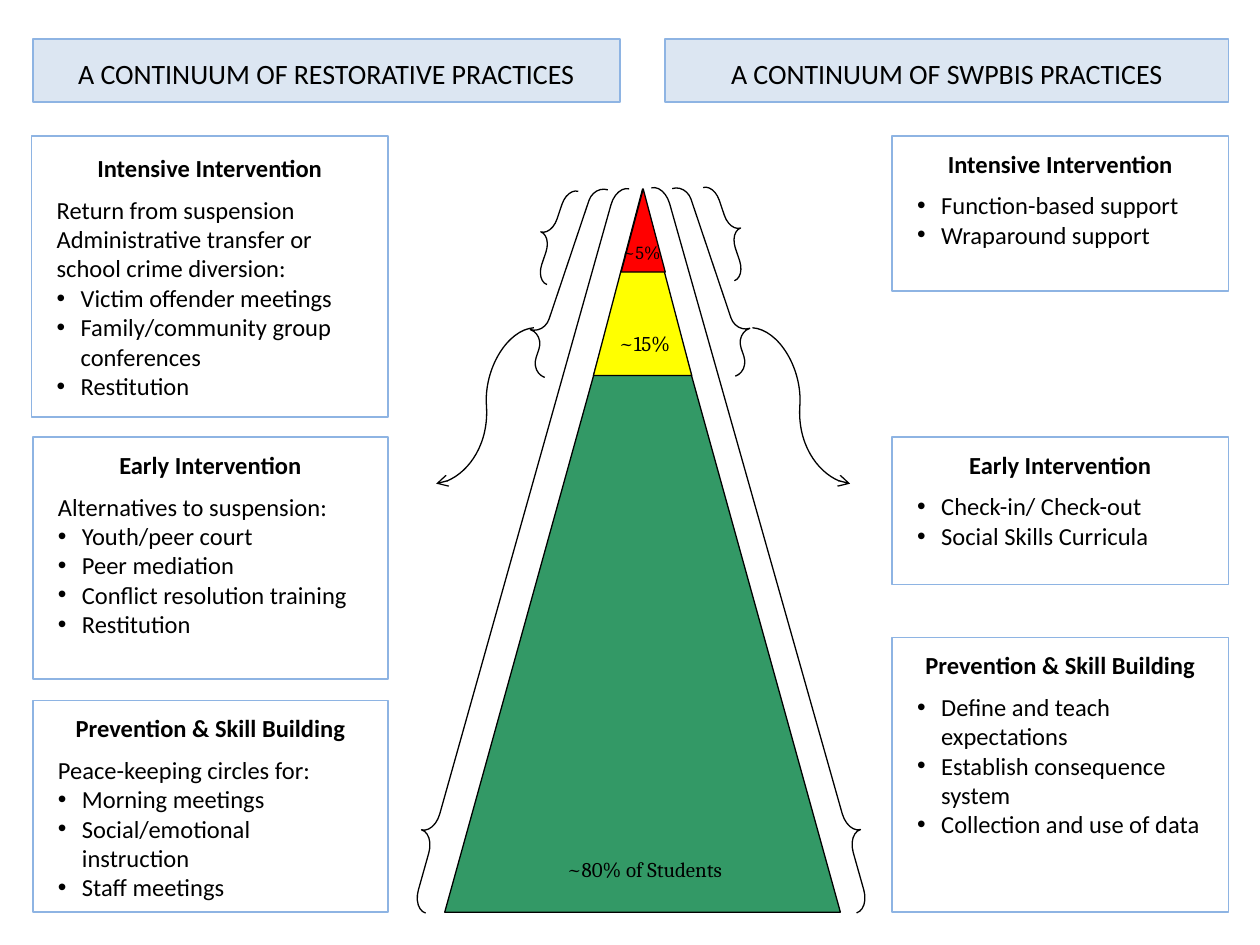
import pptx
import pptx.dml.color
import pptx.enum.shapes
import pptx.enum.text
import pptx.oxml
import pptx.oxml.ns
import pptx.util

Inches = pptx.util.Inches
Pt = pptx.util.Pt
SHAPE = pptx.enum.shapes.MSO_SHAPE
ALIGN = pptx.enum.text.PP_ALIGN
ANCHOR = pptx.enum.text.MSO_ANCHOR
qn = pptx.oxml.ns.qn
DRAWING_NS = 'xmlns:a="http://schemas.openxmlformats.org/drawingml/2006/main"'


def color(hex_string):
    return pptx.dml.color.RGBColor.from_string(hex_string)


def add_outlined(kind, place, line, width, fill=None):
    """Add a preset shape without shadow; no fill colour leaves it hollow."""
    shape = page.shapes.add_shape(kind, *map(Inches, place))
    shape.shadow.inherit = False
    shape.line.color.rgb = color(line)
    shape.line.width = Pt(width)
    if fill:
        shape.fill.solid()
        shape.fill.fore_color.rgb = color(fill)
    else:
        shape.fill.background()
    return shape


deck = pptx.Presentation()
deck.slide_width = Inches(10)
deck.slide_height = Inches(7.5)
page = deck.slides.add_slide(deck.slide_layouts[6])

# Column headers
headers = [
    ("A CONTINUUM OF RESTORATIVE PRACTICES", 0.26, 4.66),
    ("A CONTINUUM OF SWPBIS PRACTICES", 5.28, 4.47),
]
for text, left, width in headers:
    box = add_outlined(SHAPE.RECTANGLE, (left, 0.31, width, 0.5), "8EB4E3", 1, "DCE6F2")
    box.text_frame.vertical_anchor = ANCHOR.MIDDLE
    para = box.text_frame.paragraphs[0]
    para.text = text
    para.alignment = ALIGN.CENTER
    para.line_spacing = 1.15
    para.font.size = Pt(16)
    para.font.name = "Calibri"
    para.font.color.rgb = color("000000")

# Practice panels: place, title, title line spacing, plain lines, bulleted lines
panels = [
    ((0.25, 1.08, 2.83, 2.23), "Intensive Intervention", 1.15,
     ["Return from suspension", "Administrative transfer or school crime diversion:"],
     ["Victim offender meetings", "Family/community group conferences", "Restitution"]),
    ((0.26, 3.47, 2.82, 1.92), "Early Intervention", 1.0,
     ["Alternatives to suspension:"],
     ["Youth/peer court", "Peer mediation", "Conflict resolution training", "Restitution"]),
    ((0.26, 5.56, 2.82, 1.68), "Prevention & Skill Building", 1.0,
     ["Peace-keeping circles for:"],
     ["Morning meetings", "Social/emotional instruction", "Staff meetings"]),
    ((7.08, 1.08, 2.67, 1.23), "Intensive Intervention", 1.0, [],
     ["Function-based support", "Wraparound support"]),
    ((7.08, 3.47, 2.67, 1.17), "Early Intervention", 1.0, [],
     ["Check-in/ Check-out", "Social Skills Curricula"]),
    ((7.08, 5.06, 2.67, 2.18), "Prevention & Skill Building", 1.0, [],
     ["Define and teach expectations", "Establish consequence system",
      "Collection and use of data"]),
]
for place, title, title_spacing, plain, bulleted in panels:
    panel = add_outlined(SHAPE.RECTANGLE, place, "8EB4E3", 1)
    frame = panel.text_frame
    frame.word_wrap = True
    frame.vertical_anchor = ANCHOR.TOP
    frame.margin_left = frame.margin_right = Inches(0.2)
    frame.margin_top = Inches(0.1)
    frame.margin_bottom = Inches(0.05)
    frame.text = "\n".join([title] + plain + bulleted)
    for index, para in enumerate(frame.paragraphs):
        para.alignment = ALIGN.LEFT if index else ALIGN.CENTER
        for span in para.runs:
            span.font.size = Pt(14)
            span.font.name = "Calibri"
            span.font.bold = index == 0
            span.font.color.rgb = color("000000")
        if index > len(plain):
            properties = para._p.get_or_add_pPr()
            properties.set("marL", str(Inches(0.19)))
            properties.set("indent", str(Inches(-0.19)))
            for bullet in ('<a:buFont %s typeface="Arial"/>', '<a:buChar %s char="•"/>'):
                properties.append(pptx.oxml.parse_xml(bullet % DRAWING_NS))
    frame.paragraphs[0].line_spacing = title_spacing
    frame.paragraphs[0].space_after = Pt(7)

# Pyramid: each smaller triangle covers the tip of the one behind it
triangles = [
    ((3.53, 1.58, 3.14, 5.66), "339966"),
    ((4.71, 1.5, 0.78, 1.48), "FFFF00"),
    ((4.93, 1.5, 0.35, 0.66), "FF0000"),
]
for place, fill in triangles:
    add_outlined(SHAPE.ISOSCELES_TRIANGLE, place, "000000", 0.75, fill)

shares = [
    ("~80% of Students", (4.3, 6.72, 1.63, 0.41), 12),
    ("~15%", (4.75, 2.54, 0.73, 0.41), 12),
    ("~5%", (4.77, 1.84, 0.64, 0.41), 10.5),
]
for text, place, size in shares:
    label = page.shapes.add_textbox(*map(Inches, place))
    label.text_frame.word_wrap = True
    para = label.text_frame.paragraphs[0]
    para.text = text
    para.alignment = ALIGN.CENTER
    para.line_spacing = 1.15
    para.font.size = Pt(size)
    para.font.name = "Cambria"
    para.font.color.rgb = color("000000")

# Braces along both sides; those on the right are mirrored
braces = [
    ((3.98, 1.36, 0.21, 5.97), 15.7, (0.76, 0.895), False),
    ((4.35, 1.43, 0.23, 1.57), 18.6, (0.553, 0.794), False),
    ((4.29, 1.47, 0.18, 0.78), 18.6, (0.76, 0.512), False),
    ((5.98, 1.35, 0.21, 5.98), 344.2, (0.76, 0.895), True),
    ((5.58, 1.42, 0.23, 1.57), 341.4, (0.553, 0.794), True),
    ((5.7, 1.44, 0.18, 0.78), 341.4, (0.76, 0.512), True),
]
for place, angle, bends, mirrored in braces:
    brace = add_outlined(SHAPE.LEFT_BRACE, place, "000000", 0.75)
    brace.rotation = angle
    brace.adjustments[0], brace.adjustments[1] = bends
    if mirrored:
        brace._element.spPr.find(qn("a:xfrm")).set("flipH", "1")

# Curved arrows from the middle braces to the early intervention panels
for start, end, angle in [(4.28, 3.42, 356), (5.93, 6.79, 4)]:
    arrow = page.shapes.add_connector(
        pptx.enum.shapes.MSO_CONNECTOR.CURVE,
        Inches(start), Inches(2.63), Inches(end), Inches(3.81))
    arrow.line.color.rgb = color("000000")
    arrow.line.width = Pt(0.75)
    properties = arrow._element.spPr
    properties.find(qn("a:xfrm")).set("rot", str(angle * 60000))
    guides = properties.find(qn("a:prstGeom")).get_or_add_avLst()
    guides.append(pptx.oxml.parse_xml(
        '<a:gd %s name="adj1" fmla="val 48700"/>' % DRAWING_NS))
    properties.find(qn("a:ln")).append(pptx.oxml.parse_xml(
        '<a:tailEnd %s type="arrow"/>' % DRAWING_NS))
    properties.append(pptx.oxml.parse_xml("<a:effectLst %s/>" % DRAWING_NS))

deck.save("out.pptx")
